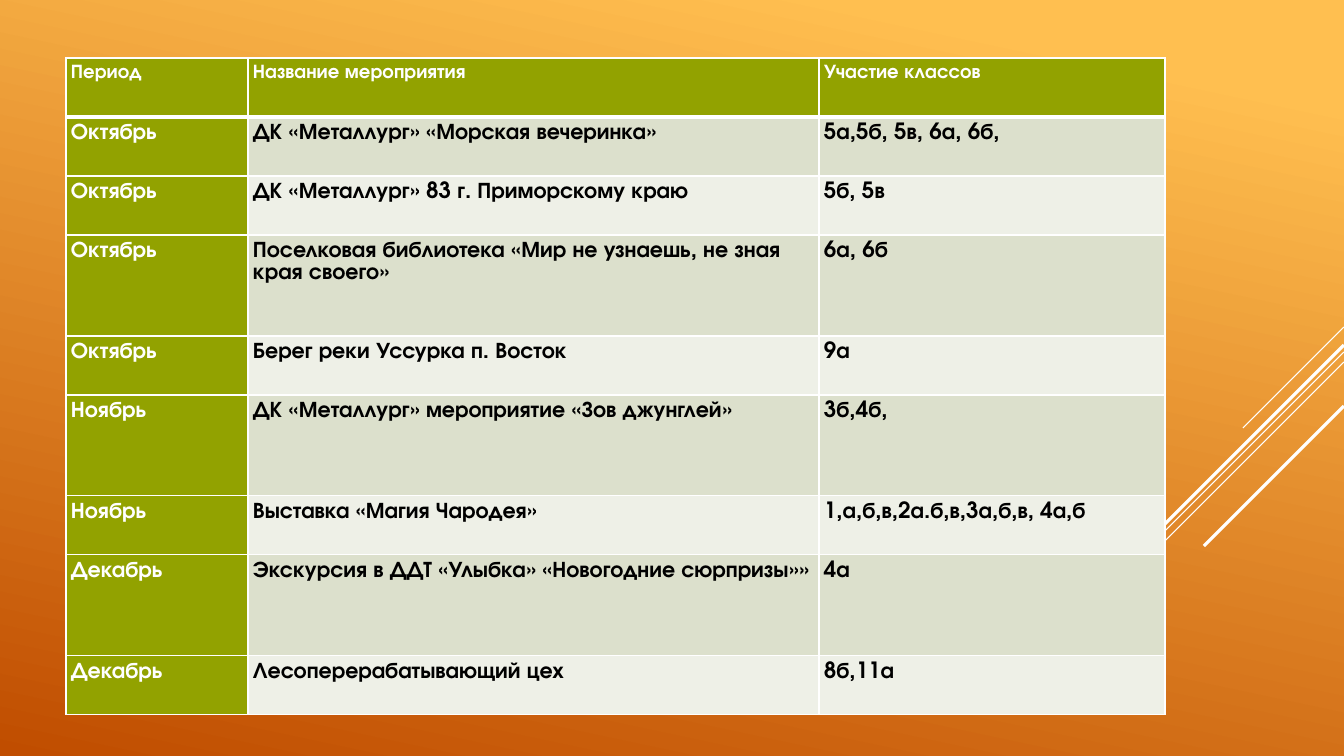
from dataclasses import dataclass

from lxml.etree import SubElement
from pptx import Presentation
from pptx.dml.color import RGBColor
from pptx.enum.shapes import MSO_CONNECTOR
from pptx.oxml.ns import qn
from pptx.util import Pt

PX = 914400 / 100.8


def px(n):
    return round(n * PX)


@dataclass(frozen=True)
class Theme:
    font: str = "TeX Gyre Adventor"
    header_size: int = 14
    body_size: int = 16
    bg_light: str = "FFBF50"
    bg_dark: str = "C04D00"
    accent: str = "92A200"
    band_dark: str = "DCE0CC"
    band_light: str = "EEF0E7"
    white: str = "FFFFFF"
    black: str = "000000"


THEME = Theme()
SLIDE_W, SLIDE_H = 1344, 756
TABLE_BOX = (66, 58, 1099, 657)
STRIPES_BOX = (1015, 327, 329, 353)

# Offset from the top of the box, horizontal run, weight in points
STRIPES = [(0, 101, 0.75), (25, 329, 0.75), (35, 209, 0.75), (18, 193, 2.25), (79, 140, 2.25)]

HEADER = ("Период", "Название мероприятия", "Участие классов")
EVENTS = [
    ("Октябрь", "ДК «Металлург» «Морская вечеринка»", "5а,5б, 5в, 6а, 6б,"),
    ("Октябрь", "ДК «Металлург» 83 г. Приморскому краю", "5б, 5в"),
    ("Октябрь", "Поселковая библиотека «Мир не узнаешь, не зная края своего»", "6а, 6б"),
    ("Октябрь", "Берег реки Уссурка п. Восток", "9а"),
    ("Ноябрь", "ДК «Металлург» мероприятие «Зов джунглей»", "3б,4б,"),
    ("Ноябрь", "Выставка «Магия Чародея»", "1,а,б,в,2а.б,в,3а,б,в, 4а,б"),
    ("Декабрь", "Экскурсия в ДДТ «Улыбка» «Новогодние сюрпризы»»", "4а"),
    ("Декабрь", "Лесоперерабатывающий цех", "8б,11а"),
]
COL_WEIGHTS = (182, 571, 346)
ROW_WEIGHTS = (59, 59, 59, 101, 59, 101, 59, 101, 59)


def rgb(color):
    return RGBColor.from_string(color)


def paint_background(s):
    fill = s.background.fill
    fill.gradient()
    fill.gradient_angle = 360 - 102
    for stop, position, color in zip(fill.gradient_stops, (0.1, 1), (THEME.bg_light, THEME.bg_dark)):
        stop.position = position
        stop.color.rgb = rgb(color)


def add_stripes(s, box):
    """Diagonal lines falling at 45 degrees from the right side of the box."""
    left, top, width, _ = box
    right = left + width
    for offset, run, weight in STRIPES:
        y = top + offset
        line = s.shapes.add_connector(MSO_CONNECTOR.STRAIGHT, px(right), px(y), px(right - run), px(y + run))
        line.line.color.rgb = rgb(THEME.white)
        line.line.width = Pt(weight)
        SubElement(line._element.spPr, qn("a:effectLst"))


def set_borders(cell, row):
    tcPr = cell._tc.get_or_add_tcPr()
    for side in "LRTB":
        under_header = (row, side) in ((0, "B"), (1, "T"))
        ln = SubElement(tcPr, qn(f"a:ln{side}"), w=str(Pt(3 if under_header else 1)))
        SubElement(SubElement(ln, qn("a:solidFill")), qn("a:srgbClr"), val=THEME.white)


def format_cell(cell, row, col, text):
    set_borders(cell, row)
    on_accent = row == 0 or col == 0
    band = THEME.band_dark if row % 2 else THEME.band_light
    cell.fill.solid()
    cell.fill.fore_color.rgb = rgb(THEME.accent if on_accent else band)
    cell.margin_left = cell.margin_right = cell.margin_top = cell.margin_bottom = px(5)

    p = cell.text_frame.paragraphs[0]
    p.text = text
    p.line_spacing = 1.07
    p.font.name = THEME.font
    p.font.size = Pt(THEME.body_size if row else THEME.header_size)
    p.font.bold = True
    p.font.color.rgb = rgb(THEME.white if on_accent else THEME.black)


def add_schedule(s, box):
    left, top, width, height = box
    rows = [HEADER, *EVENTS]
    table = s.shapes.add_table(len(rows), len(HEADER), px(left), px(top), px(width), px(height)).table
    for column, weight in zip(table.columns, COL_WEIGHTS):
        column.width = px(width * weight / sum(COL_WEIGHTS))
    for table_row, weight in zip(table.rows, ROW_WEIGHTS):
        table_row.height = px(height * weight / sum(ROW_WEIGHTS))
    for i, texts in enumerate(rows):
        for j, text in enumerate(texts):
            format_cell(table.cell(i, j), i, j, text)


def main():
    prs = Presentation()
    prs.slide_width, prs.slide_height = px(SLIDE_W), px(SLIDE_H)
    s = prs.slides.add_slide(prs.slide_layouts[6])  # blank layout
    paint_background(s)
    add_stripes(s, STRIPES_BOX)
    add_schedule(s, TABLE_BOX)
    prs.save("out.pptx")


if __name__ == "__main__":
    main()
